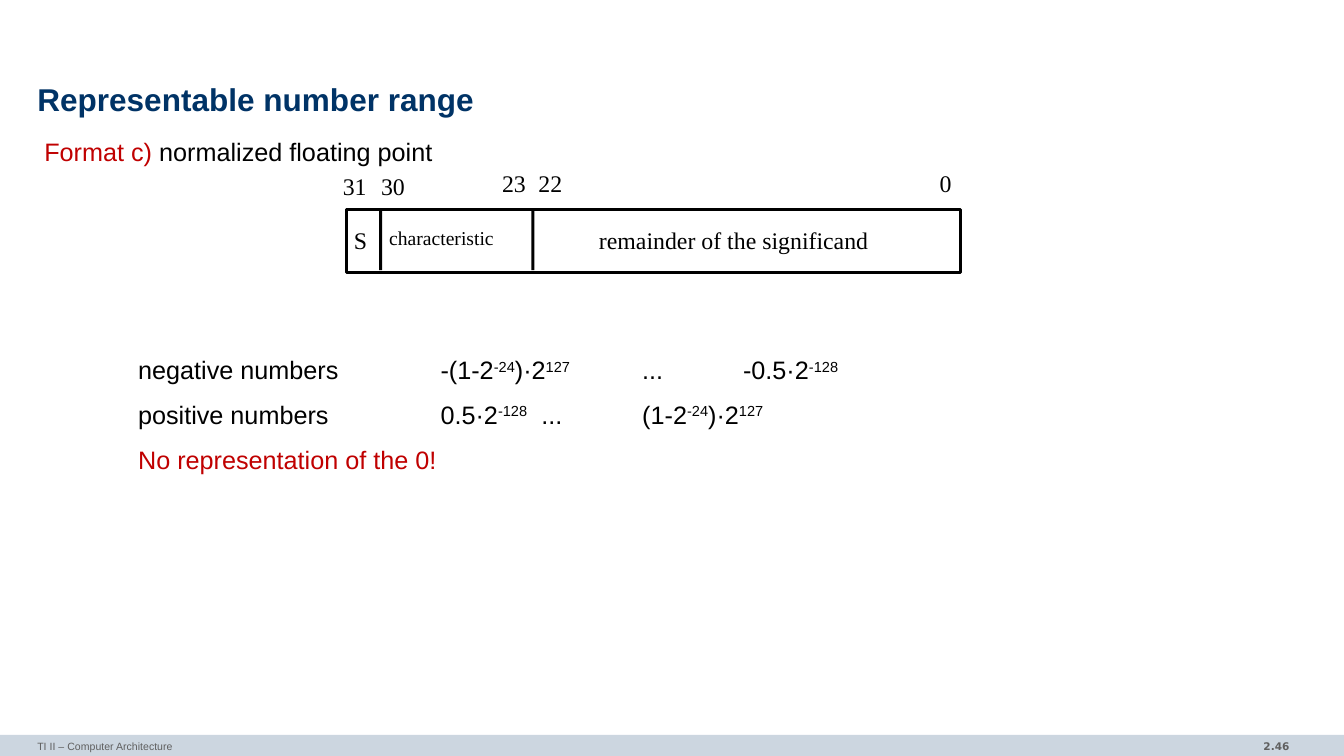
import pptx
import pptx.dml.color
import pptx.enum.shapes
import pptx.enum.text
import pptx.oxml
import pptx.oxml.ns
import pptx.util
from pptx.util import Inches

COLOURS = {
    "title": "003366",
    "text": "000000",
    "accent": "C00000",
    "footer": "5F5F5F",
    "bar": "CCD6E0",
    "field": "FFFFFF",
}
BODY_SPACING = 1.02

# Bit field labels: text, left, top, width, size
FIELD_LABELS = [
    ("31", 3.4, 1.7, 0.24, 17),
    ("30", 3.78, 1.7, 0.24, 17),
    ("23", 4.98, 1.67, 0.24, 17),
    ("22", 5.34, 1.67, 0.24, 17),
    ("0", 9.32, 1.67, 0.12, 17),
    ("S", 3.51, 2.24, 0.23, 17),
    ("characteristic", 3.86, 2.24, 1.05, 14),
    ("remainder of the significand", 5.94, 2.24, 2.69, 17),
]

# Number ranges: tab stops in inches, then text parts marked "sup" when raised
RANGES = [
    ([3, 5, 6], [("negative numbers\t-(1-2", ""), ("-24", "sup"), (")·2", ""),
                 ("127", "sup"), ("\t...\t-0.5·2", ""), ("-128", "sup")]),
    ([3, 4, 5], [("positive numbers\t0.5·2", ""), ("-128", "sup"), ("\t...\t(1-2", ""),
                 ("-24", "sup"), (")·2", ""), ("127", "sup")]),
]


def rgb(name):
    return pptx.dml.color.RGBColor.from_string(COLOURS[name])


def add_run(paragraph, text, size, colour="text", font="Arial", bold=False, raised=False):
    run = paragraph.add_run()
    run.text = text
    run.font.size = pptx.util.Pt(size)
    run.font.name = font
    run.font.bold = bold
    run.font.color.rgb = rgb(colour)
    if raised:
        run._r.get_or_add_rPr().set("baseline", "30000")


def add_text_frame(slide, left, top, width, height, wrap=True):
    """Add a text box without margins and return its text frame."""
    box = slide.shapes.add_textbox(Inches(left), Inches(top), Inches(width), Inches(height))
    frame = box.text_frame
    frame.word_wrap = wrap
    frame.margin_left = frame.margin_right = frame.margin_top = frame.margin_bottom = 0
    return frame


def add_rectangle(slide, left, top, width, height, fill, line_width=0):
    shape = slide.shapes.add_shape(
        pptx.enum.shapes.MSO_SHAPE.RECTANGLE,
        Inches(left), Inches(top), Inches(width), Inches(height))
    shape.shadow.inherit = False
    shape.fill.solid()
    shape.fill.fore_color.rgb = rgb(fill)
    if line_width:
        shape.line.color.rgb = rgb("text")
        shape.line.width = pptx.util.Pt(line_width)
    else:
        shape.line.fill.background()


def set_tab_stops(paragraph, stops):
    properties = paragraph._p.get_or_add_pPr()
    tab_list = pptx.oxml.parse_xml(f"<a:tabLst {pptx.oxml.ns.nsdecls('a')}/>")
    for stop in stops:
        tab = tab_list.makeelement(pptx.oxml.ns.qn("a:tab"), {"pos": str(Inches(stop)), "algn": "l"})
        tab_list.append(tab)
    properties.append(tab_list)


def add_footer(slide):
    add_rectangle(slide, 0, 7.29, 13.33, 0.21, "bar")
    course = add_text_frame(slide, 0.37, 7.29, 8.72, 0.21)
    number = add_text_frame(slide, 11.1, 7.29, 1.69, 0.22)
    course.margin_top = number.margin_top = Inches(0.05)
    add_run(course.paragraphs[0], "TI II – Computer Architecture", 7.5, "footer")
    number.paragraphs[0].alignment = pptx.enum.text.PP_ALIGN.RIGHT
    add_run(number.paragraphs[0], "2.46", 7.5, "footer", "DejaVu Sans", bold=True)


def add_headings(slide):
    title = add_text_frame(slide, 0.37, 0.78, 12.6, 0.47)
    title.vertical_anchor = pptx.enum.text.MSO_ANCHOR.MIDDLE
    title.paragraphs[0].line_spacing = 0.85
    add_run(title.paragraphs[0], "Representable number range", 22.5, "title", bold=True)

    subtitle = add_text_frame(slide, 0.44, 1.35, 12.53, 0.3).paragraphs[0]
    subtitle.line_spacing = BODY_SPACING
    add_run(subtitle, "Format c) ", 18, "accent")
    add_run(subtitle, "normalized floating point", 18)


def add_bit_fields(slide):
    add_rectangle(slide, 3.44, 2.08, 6.09, 0.62, "field", line_width=2)
    for divider_left in (3.76, 5.27):
        add_rectangle(slide, divider_left, 2.07, 0.03, 0.61, "text")
    for text, left, top, width, size in FIELD_LABELS:
        frame = add_text_frame(slide, left, top, width, 0.29, wrap=False)
        add_run(frame.paragraphs[0], text, size, font="Times New Roman")


def add_ranges(slide):
    frame = add_text_frame(slide, 1.37, 3.51, 11.6, 1.3)
    paragraph = frame.paragraphs[0]
    for stops, parts in RANGES:
        set_tab_stops(paragraph, stops)
        paragraph.line_spacing = BODY_SPACING
        for text, position in parts:
            add_run(paragraph, text, 18, raised=position == "sup")
        paragraph = frame.add_paragraph()
        paragraph.space_before = pptx.util.Pt(10)
    paragraph.line_spacing = BODY_SPACING
    add_run(paragraph, "No representation of the 0!", 18, "accent")


def main():
    presentation = pptx.Presentation()
    presentation.slide_width = Inches(13.33)
    presentation.slide_height = Inches(7.5)
    slide = presentation.slides.add_slide(presentation.slide_layouts[6])
    add_footer(slide)
    add_headings(slide)
    add_bit_fields(slide)
    add_ranges(slide)
    presentation.save("out.pptx")


if __name__ == "__main__":
    main()
